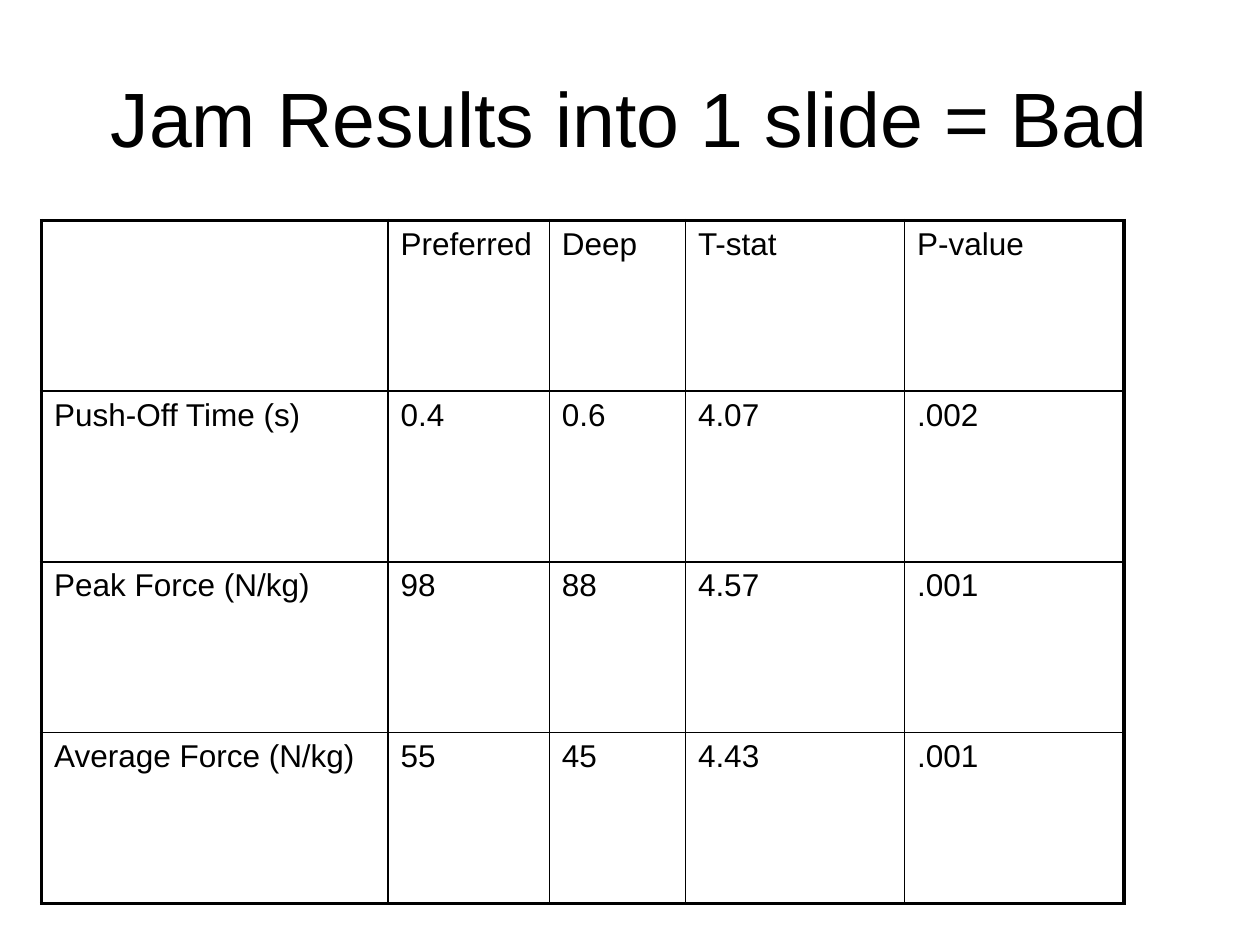
from dataclasses import dataclass

from lxml.etree import SubElement as Sub
from pptx import Presentation
from pptx.dml.color import RGBColor as Color
from pptx.enum.text import MSO_ANCHOR as Anchor, PP_ALIGN as Align
from pptx.oxml.ns import qn
from pptx.util import Inches, Pt


@dataclass(frozen=True)
class Theme:
    font: str = "Arial"
    ink: str = "000000"
    paper: str = "FFFFFF"
    title: float = 44
    body: float = 18
    thin: float = 1
    thick: float = 2.25


THEME = Theme()
WIDTHS = [2.75, 1.28, 1.08, 1.74, 1.74]
HEIGHT = 5.42
RESULTS = [
    ["", "Preferred", "Deep", "T-stat", "P-value"],
    ["Push-Off Time (s)", "0.4", "0.6", "4.07", ".002"],
    ["Peak Force (N/kg)", "98", "88", "4.57", ".001"],
    ["Average Force (N/kg)", "55", "45", "4.43", ".001"],
]


def assign(item, values):
    for name, value in values.items():
        setattr(item, name, value)


def write(frame, text, size, **layout):
    """Put one styled paragraph in a text frame."""
    para = frame.paragraphs[0]
    assign(para, layout)
    assign(para.font, {"size": Pt(size), "name": THEME.font, "bold": False})
    para.font.color.rgb = Color.from_string(THEME.ink)
    if text:
        run = para.add_run()
        run.text = text
        assign(run.font, {"size": Pt(size), "name": THEME.font, "bold": False})
        run.font.color.rgb = Color.from_string(THEME.ink)


def add_title(slide, text):
    title = slide.shapes.title
    assign(title, {"left": Inches(0.5), "top": Inches(0.3),
                   "width": Inches(9), "height": Inches(1.25)})
    assign(title.text_frame, {"word_wrap": True,
                              "vertical_anchor": Anchor.MIDDLE})
    write(title.text_frame, text, THEME.title, alignment=Align.CENTER)


def draw_edges(cell, outer):
    """Rule all four sides, thick where the side is on the table's rim."""
    props = cell._tc.get_or_add_tcPr()
    for side, rim in outer.items():
        width = Pt(THEME.thick if rim else THEME.thin)
        line = Sub(props, qn(f"a:ln{side}"), w=str(width))
        fill = Sub(line, qn("a:solidFill"))
        Sub(fill, qn("a:srgbClr"), val=THEME.ink)


def add_grid(slide, data):
    rows, cols = len(data), len(WIDTHS)
    table = slide.shapes.add_table(
        rows, cols, Inches(0.33), Inches(1.75),
        Inches(sum(WIDTHS)), Inches(HEIGHT)).table
    assign(table, {"first_row": False, "horz_banding": False})
    for col, width in zip(table.columns, WIDTHS):
        col.width = Inches(width)
    for r, line in enumerate(data):
        table.rows[r].height = Inches(HEIGHT / rows)
        for c, text in enumerate(line):
            cell = table.cell(r, c)
            write(cell.text_frame, text, THEME.body,
                  space_before=Pt(THEME.body * 0.2))
            draw_edges(cell, {"L": c == 0, "R": c == cols - 1,
                              "T": r == 0, "B": r == rows - 1})
            cell.fill.background()


def main():
    deck = Presentation()
    assign(deck, {"slide_width": Inches(10), "slide_height": Inches(7.5)})
    slide = deck.slides.add_slide(deck.slide_layouts[5])
    back = slide.background.fill
    back.solid()
    back.fore_color.rgb = Color.from_string(THEME.paper)
    add_title(slide, "Jam Results into 1 slide = Bad")
    add_grid(slide, RESULTS)
    deck.save("out.pptx")


if __name__ == "__main__":
    main()
